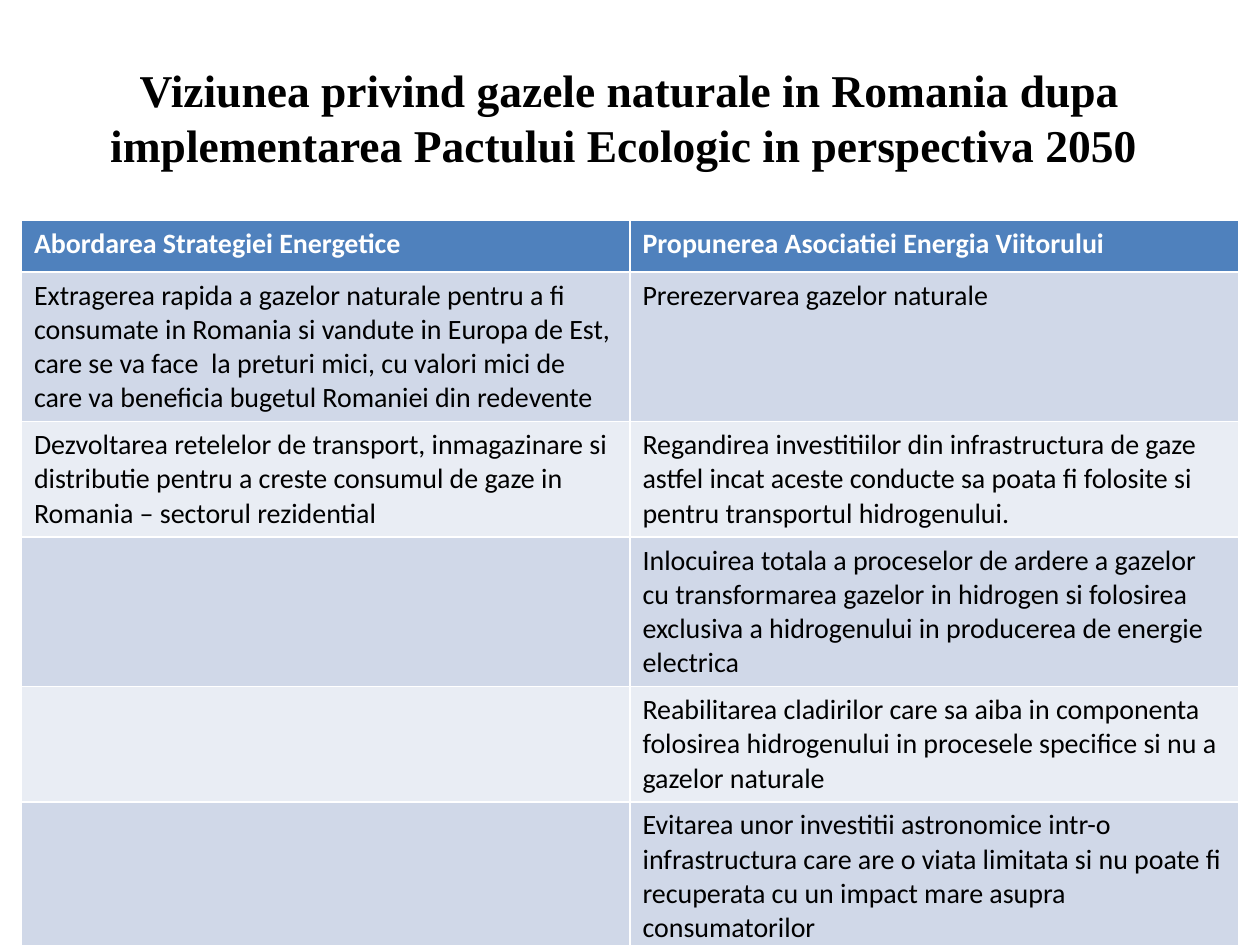
"""Build a slide comparing two approaches to natural gas in Romania."""
from pptx import Presentation
from pptx import util as u
from pptx.dml.color import RGBColor
from pptx.enum import text

COLOURS = {
    "text": "000000",
    "header_text": "FFFFFF",
    "header": "4F81BD",
    "odd_row": "D0D8E8",
    "even_row": "E9EDF4",
}
TITLE = ("Viziunea privind gazele naturale in Romania dupa "
         "implementarea Pactului Ecologic in perspectiva 2050 ")
ROWS = [
    ("Abordarea Strategiei Energetice",
     "Propunerea Asociatiei Energia Viitorului"),
    ("Extragerea rapida a gazelor naturale pentru a fi consumate in Romania "
     "si vandute in Europa de Est, care se va face  la preturi mici, cu valori "
     "mici de care va beneficia bugetul Romaniei din redevente",
     "Prerezervarea gazelor naturale"),
    ("Dezvoltarea retelelor de transport, inmagazinare si distributie pentru "
     "a creste consumul de gaze in Romania – sectorul rezidential",
     "Regandirea investitiilor din infrastructura de gaze astfel incat aceste "
     "conducte sa poata fi folosite si pentru transportul hidrogenului."),
    ("",
     "Inlocuirea totala a proceselor de ardere a gazelor cu transformarea "
     "gazelor in hidrogen si folosirea exclusiva a hidrogenului in producerea "
     "de energie electrica"),
    ("",
     "Reabilitarea cladirilor care sa aiba in componenta folosirea "
     "hidrogenului in procesele specifice si nu a gazelor naturale"),
    ("",
     "Evitarea unor investitii astronomice intr-o infrastructura care are o "
     "viata limitata si nu poate fi recuperata cu un impact mare asupra "
     "consumatorilor"),
]


def set_font(paragraph, name, size, colour, bold):
    paragraph.font.name = name
    paragraph.font.size = u.Pt(size)
    paragraph.font.bold = bold
    paragraph.font.color.rgb = RGBColor.from_string(COLOURS[colour])


def set_title(slide):
    title = slide.shapes.title
    title.left, title.top = u.Inches(0.5), u.Inches(0.3)
    title.width, title.height = u.Inches(9), u.Inches(1.25)
    frame = title.text_frame
    frame.text = TITLE
    frame.auto_size = text.MSO_AUTO_SIZE.NONE
    frame.vertical_anchor = text.MSO_ANCHOR.MIDDLE
    paragraph = frame.paragraphs[0]
    paragraph.alignment = text.PP_ALIGN.CENTER
    set_font(paragraph, "Times New Roman", 26, "text", True)


def fill_cell(cell, wording, fill, colour, bold):
    cell.text = wording
    cell.fill.solid()
    cell.fill.fore_color.rgb = RGBColor.from_string(COLOURS[fill])
    set_font(cell.text_frame.paragraphs[0], "Calibri", 16, colour, bold)


def add_comparison(slide):
    row_height = u.Inches(0.41)
    table = slide.shapes.add_table(
        len(ROWS), len(ROWS[0]), u.Inches(0.17), u.Inches(1.75),
        u.Inches(9.66), row_height * len(ROWS)).table
    for row, wordings in enumerate(ROWS):
        if row == 0:
            style = ("header", "header_text", True)
        else:
            style = ("odd_row" if row % 2 else "even_row", "text", False)
        for column, wording in enumerate(wordings):
            fill_cell(table.cell(row, column), wording, *style)


def main():
    presentation = Presentation()
    presentation.slide_width = u.Inches(10)
    presentation.slide_height = u.Inches(7.5)
    slide = presentation.slides.add_slide(presentation.slide_layouts[5])
    set_title(slide)
    add_comparison(slide)
    presentation.save("out.pptx")


if __name__ == "__main__":
    main()
